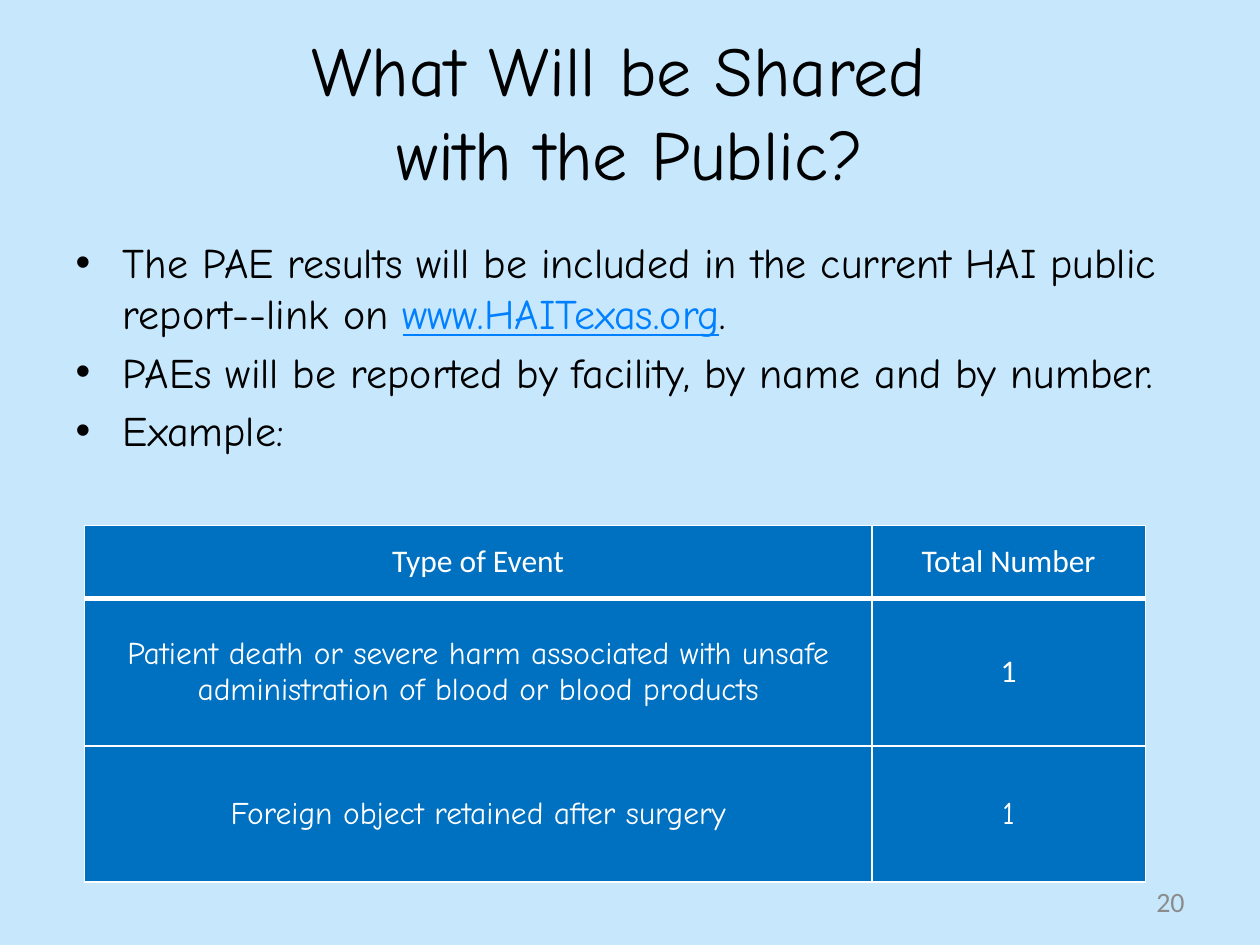
from lxml.etree import SubElement
from pptx import Presentation
from pptx.dml.color import RGBColor
from pptx.enum.text import MSO_ANCHOR as Anchor, MSO_AUTO_SIZE as AutoSize, PP_ALIGN as Align
from pptx.oxml.ns import qn
from pptx.util import Inches, Pt

COLORS = {"background": "C6E7FC", "text": "000000", "link": "0080FF",
          "cell": "0070C0", "white": "FFFFFF", "number": "8C8C8C"}
COMIC, CALIBRI = "Comic Neue", "Calibri"

TITLE = "What Will be Shared \vwith the Public?"
# Each bullet is a list of (text, color, underline) runs.
BULLETS = [
    [("The PAE results will be included in the current HAI public report--link on ", "text", False),
     ("www.HAITexas.org", "link", True),
     (".\t", "text", False)],
    [("PAEs will be reported by facility, by name and by number.", "text", False)],
    [("Example:", "text", False)],
]
PAGE_NUMBER = "20"
EVENTS = [
    [("Type of Event", CALIBRI), ("Total Number", CALIBRI)],
    [("Patient death or severe harm associated with unsafe administration of blood or blood products",
      COMIC), ("1", CALIBRI)],
    [("Foreign object retained after surgery", COMIC), ("1", COMIC)],
]
COLUMN_WIDTHS = [6.25, 2.17]
ROW_HEIGHTS = [0.58, 1.17, 1.08]


def rgb(name):
    return RGBColor.from_string(COLORS[name])


def format_font(font, color, **values):
    font.color.rgb = rgb(color)
    for name, value in values.items():
        setattr(font, name, value)


def place(shape, left, top, width, height):
    box = {"left": left, "top": top, "width": width, "height": height}
    for name, value in box.items():
        setattr(shape, name, Inches(value))


def write_line(text_frame, text, align, color, **font_values):
    text_frame.text = text
    paragraph = text_frame.paragraphs[0]
    paragraph.alignment = align
    for run in paragraph.runs:
        format_font(run.font, color, **font_values)


def add_borders(cell, widths):
    """Draw white cell borders; widths maps a side (L, R, T, B) to points."""
    properties = cell._tc.get_or_add_tcPr()
    for side, width in widths.items():
        line = SubElement(properties, qn(f"a:ln{side}"), w=str(Pt(width)))
        fill = SubElement(line, qn("a:solidFill"))
        SubElement(fill, qn("a:srgbClr"), val=COLORS["white"])


def add_title(slide):
    title = slide.shapes.title
    place(title, 0.5, 0.25, 9, 1.25)
    title.text_frame.auto_size = AutoSize.NONE
    title.text_frame.vertical_anchor = Anchor.MIDDLE
    write_line(title.text_frame, TITLE, Align.CENTER, "text", name=COMIC, size=Pt(40))


def add_bullets(slide):
    body = slide.placeholders[1]
    place(body, 0.5, 1.83, 9, 4.95)
    text_frame = body.text_frame
    text_frame.auto_size = AutoSize.NONE
    for index, runs in enumerate(BULLETS):
        paragraph = text_frame.add_paragraph() if index else text_frame.paragraphs[0]
        for text, color, underline in runs:
            run = paragraph.add_run()
            run.text = text
            format_font(run.font, color, name=COMIC, size=Pt(24), underline=underline)


def add_page_number(slide):
    box = slide.shapes.add_textbox(Inches(7.17), Inches(6.95), Inches(2.33), Inches(0.4))
    box.text_frame.word_wrap = True
    box.text_frame.vertical_anchor = Anchor.MIDDLE
    write_line(box.text_frame, PAGE_NUMBER, Align.RIGHT, "number", name=CALIBRI, size=Pt(16))


def add_event_table(slide):
    table = slide.shapes.add_table(
        len(EVENTS), len(COLUMN_WIDTHS), Inches(0.67), Inches(4.17),
        Inches(sum(COLUMN_WIDTHS)), Inches(sum(ROW_HEIGHTS))).table
    for column, width in zip(table.columns, COLUMN_WIDTHS):
        column.width = Inches(width)
    for row, height in zip(table.rows, ROW_HEIGHTS):
        row.height = Inches(height)
    for row_index, row in enumerate(EVENTS):
        for column_index, (text, font_name) in enumerate(row):
            cell = table.cell(row_index, column_index)
            add_borders(cell, {"L": 1, "R": 1,
                               "T": 3 if row_index == 1 else 1,
                               "B": 3 if row_index == 0 else 1})
            cell.fill.solid()
            cell.fill.fore_color.rgb = rgb("cell")
            cell.vertical_anchor = Anchor.MIDDLE
            write_line(cell.text_frame, text, Align.CENTER, "white",
                       name=font_name, size=Pt(18), bold=False)


def main():
    presentation = Presentation()
    presentation.slide_width, presentation.slide_height = Inches(10), Inches(7.5)
    slide = presentation.slides.add_slide(presentation.slide_layouts[1])
    slide.background.fill.solid()
    slide.background.fill.fore_color.rgb = rgb("background")
    add_title(slide)
    add_bullets(slide)
    add_page_number(slide)
    add_event_table(slide)
    presentation.save("out.pptx")


if __name__ == "__main__":
    main()
